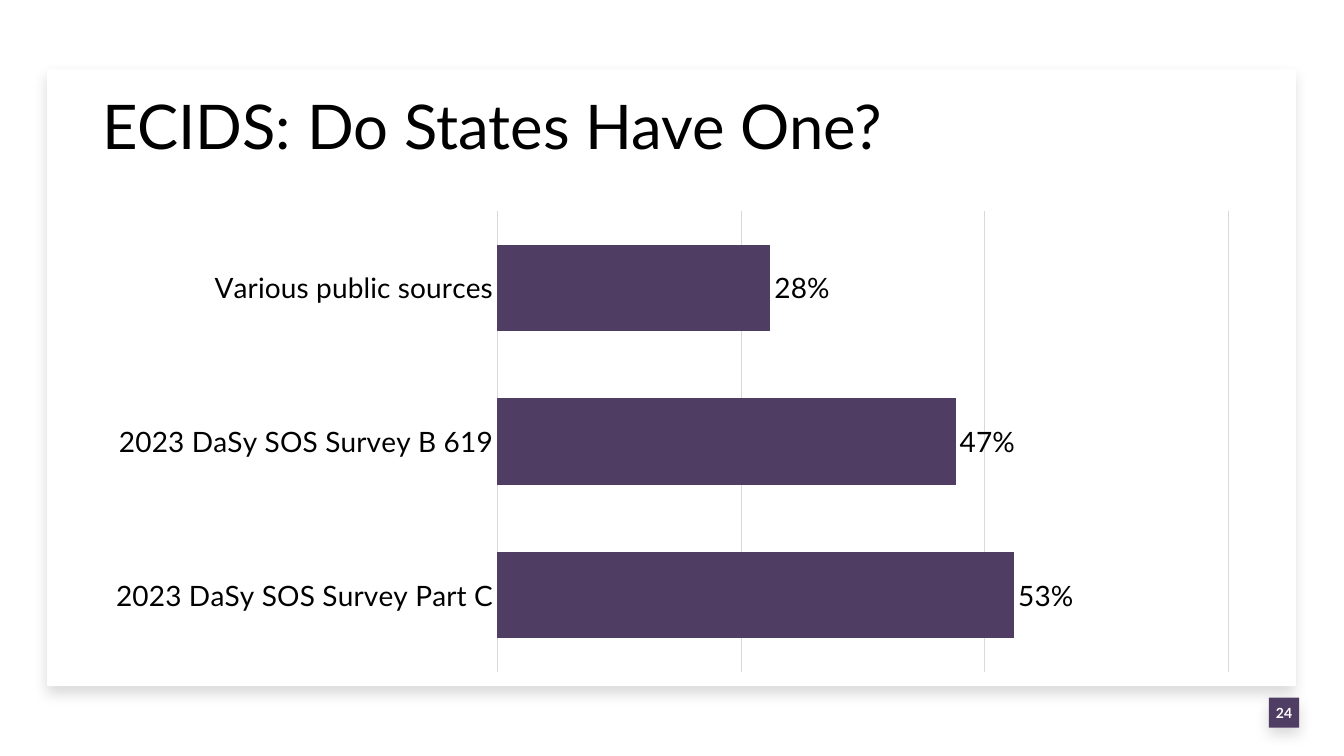
import lxml.etree
import pptx
import pptx.chart.data
import pptx.dml.color
import pptx.enum.chart
import pptx.enum.shapes
import pptx.enum.text
import pptx.oxml
import pptx.oxml.ns
import pptx.util
from pptx.util import Cm

COLORS = {"white": "FFFFFF", "black": "000000", "purple": "4F3D63", "grid": "D9D9D9"}
FONT = "Lato"
HAVE_ECIDS = {
    "2023 DaSy SOS Survey Part C": 0.53,
    "2023 DaSy SOS Survey B 619": 0.47,
    "Various public sources": 0.28,
}


def color(name):
    return pptx.dml.color.RGBColor.from_string(COLORS[name])


def style_font(font, size, color_name="black", bold=False):
    font.name = FONT
    font.size = pptx.util.Pt(size)
    font.bold = bold
    font.color.rgb = color(color_name)


def style_line(line):
    line.color.rgb = color("grid")
    line.width = pptx.util.Pt(0.75)


def write_text(shape, text, size, color_name="black", bold=False,
               align=pptx.enum.text.PP_ALIGN.LEFT, line_spacing=1.0, inset=None):
    frame = shape.text_frame
    frame.word_wrap = True
    frame.vertical_anchor = pptx.enum.text.MSO_ANCHOR.MIDDLE
    if inset is not None:
        frame.margin_left = frame.margin_right = inset
        frame.margin_top = frame.margin_bottom = inset
    paragraph = frame.paragraphs[0]
    paragraph.alignment = align
    paragraph.line_spacing = line_spacing
    run = paragraph.add_run()
    run.text = text
    style_font(run.font, size, color_name, bold)


def add_soft_shadow(shape):
    """Black shadow straight below the shape: 10 pt blur, 5 pt away, 15 % opaque."""
    shape.shadow.inherit = False
    effects = shape._element.spPr.find(pptx.oxml.ns.qn("a:effectLst"))
    effects.append(pptx.oxml.parse_xml(
        f'<a:outerShdw {pptx.oxml.ns.nsdecls("a")} blurRad="{pptx.util.Pt(10)}" '
        f'dist="{pptx.util.Pt(5)}" dir="5400000" algn="t" rotWithShape="0">'
        f'<a:srgbClr val="{COLORS["black"]}"><a:alpha val="15000"/></a:srgbClr>'
        '</a:outerShdw>'))


class SlideBuilder:
    def __init__(self, presentation):
        self.slide = presentation.slides.add_slide(presentation.slide_layouts[6])

    def panel(self, left, top, width, height, fill):
        shape = self.slide.shapes.add_shape(
            pptx.enum.shapes.MSO_SHAPE.RECTANGLE, left, top, width, height)
        shape.fill.solid()
        shape.fill.fore_color.rgb = color(fill)
        shape.line.fill.background()
        add_soft_shadow(shape)
        return shape

    def text(self, left, top, width, height, text, **text_format):
        box = self.slide.shapes.add_textbox(left, top, width, height)
        write_text(box, text, **text_format)

    def bar_chart(self, left, top, width, height, values):
        data = pptx.chart.data.CategoryChartData(number_format="0%")
        data.categories = list(values)
        data.add_series("Series 1", list(values.values()))
        chart = self.slide.shapes.add_chart(
            pptx.enum.chart.XL_CHART_TYPE.BAR_CLUSTERED,
            left, top, width, height, data).chart
        chart.has_title = False
        chart.has_legend = False
        style_font(chart.font, 20)

        category_axis = chart.category_axis
        category_axis.major_tick_mark = pptx.enum.chart.XL_TICK_MARK.NONE
        style_line(category_axis.format.line)

        value_axis = chart.value_axis
        value_axis.minimum_scale = 0
        value_axis.maximum_scale = 0.75
        value_axis.major_unit = 0.25
        value_axis.has_major_gridlines = True
        style_line(value_axis.major_gridlines.format.line)
        value_axis.visible = False

        plot = chart.plots[0]
        plot.gap_width = 77
        plot.vary_by_categories = False
        fill = plot.series[0].format.fill
        fill.solid()
        fill.fore_color.rgb = color("purple")
        plot.has_data_labels = True
        labels = plot.data_labels
        labels.show_value = True
        labels.number_format = "0%"
        labels.number_format_is_linked = False
        labels.position = pptx.enum.chart.XL_LABEL_POSITION.OUTSIDE_END
        style_font(labels.font, 20)


def main():
    presentation = pptx.Presentation()
    presentation.slide_width = Cm(33.87)
    presentation.slide_height = Cm(19.05)
    builder = SlideBuilder(presentation)

    builder.panel(Cm(1.19), Cm(1.75), Cm(31.47), Cm(15.54), "white")
    badge = builder.panel(Cm(31.98), Cm(17.58), Cm(0.76), Cm(0.76), "purple")
    write_text(badge, "24", size=10, color_name="white", bold=True,
               align=pptx.enum.text.PP_ALIGN.CENTER, inset=0)

    left, width = Cm(2.34), Cm(29.21)
    builder.text(left, Cm(1.88), width, Cm(2.79), "ECIDS: Do States Have One?",
                 size=44, line_spacing=0.9)
    builder.bar_chart(left, Cm(5.08), width, Cm(12.09), HAVE_ECIDS)
    presentation.save("out.pptx")


if __name__ == "__main__":
    main()
